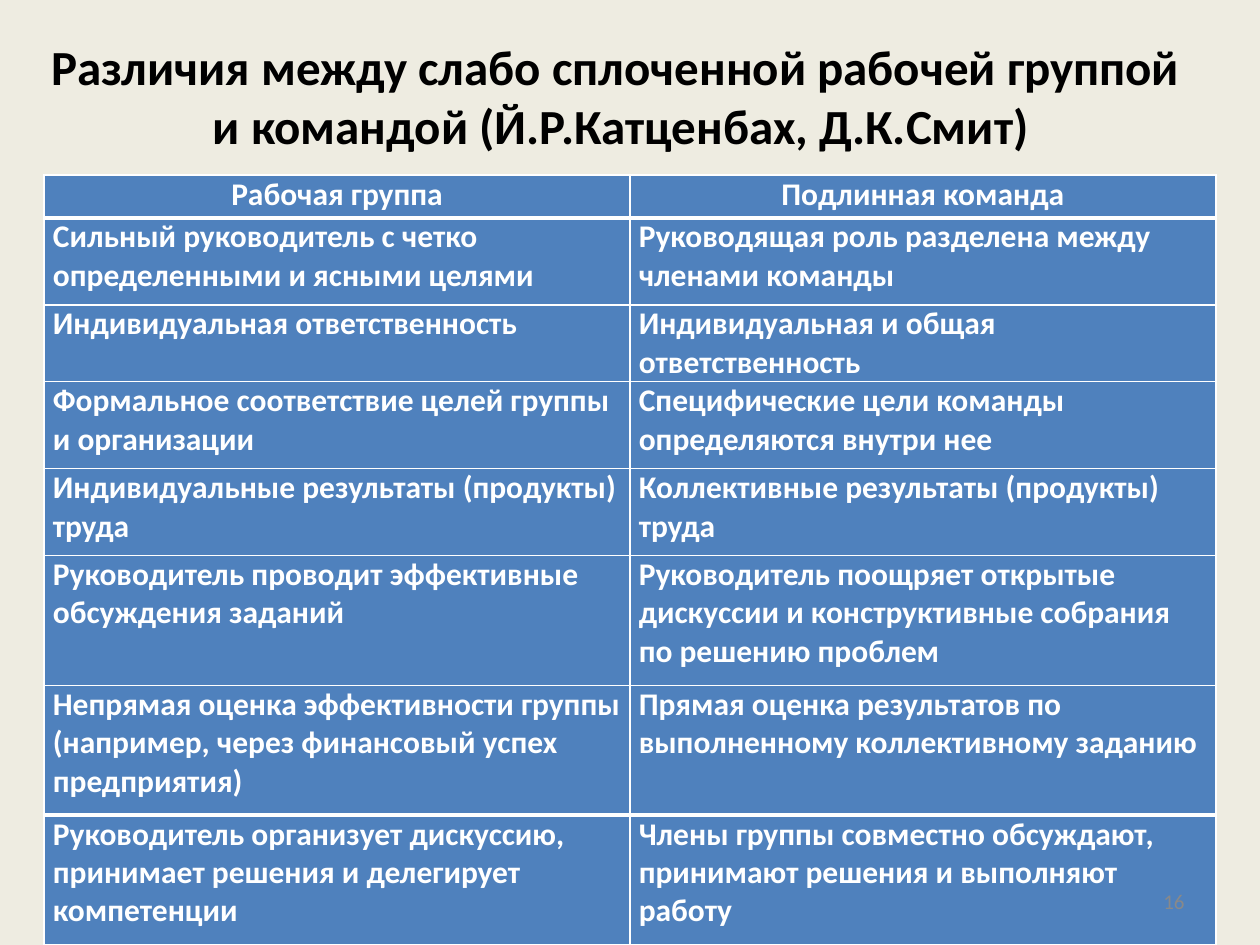
from lxml import etree
from pptx import Presentation
from pptx.dml.color import RGBColor
from pptx.enum.text import MSO_ANCHOR, PP_ALIGN
from pptx.oxml.ns import qn
from pptx.util import Inches, Pt

LEFT, CENTER, RIGHT = PP_ALIGN.LEFT, PP_ALIGN.CENTER, PP_ALIGN.RIGHT
TOP, MIDDLE = MSO_ANCHOR.TOP, MSO_ANCHOR.MIDDLE
COLORS = {"background": "EEECE1", "title": "000000", "cell": "4F81BD",
          "white": "FFFFFF", "number": "898989"}
ROWS = [
    ("Рабочая группа", "Подлинная команда"),
    ("Сильный руководитель с четко определенными и ясными целями",
     "Руководящая роль разделена между членами команды"),
    ("Индивидуальная ответственность",
     "Индивидуальная и общая ответственность"),
    ("Формальное соответствие целей группы и организации",
     "Специфические цели команды определяются внутри нее"),
    ("Индивидуальные результаты (продукты) труда",
     "Коллективные результаты (продукты) труда"),
    ("Руководитель проводит эффективные обсуждения заданий",
     "Руководитель поощряет открытые дискуссии и конструктивные собрания "
     "по решению проблем"),
    ("Непрямая оценка эффективности группы (например, через финансовый успех предприятия)",
     "Прямая оценка результатов по выполненному коллективному заданию"),
    ("Руководитель организует дискуссию, принимает решения и делегирует компетенции",
     "Члены группы совместно обсуждают, принимают решения и выполняют работу"),
]
ROW_HEIGHTS = [0.34, 0.69, 0.61, 0.69, 0.69, 1.03, 1.03, 1.03]
THICK_LINES = (1, len(ROWS) - 1)  # below the header and above the last row


def write_text(frame, text, size=18, color="white", bold=True, align=LEFT):
    frame.word_wrap = True
    paragraph = frame.paragraphs[0]
    paragraph.text = text
    paragraph.alignment = align
    for run in paragraph.runs:
        run.font.name = "Calibri"
        run.font.size = Pt(size)
        run.font.bold = bold
        run.font.color.rgb = RGBColor.from_string(COLORS[color])


def set_borders(cell, widths):
    """Draw white borders; widths are points for left, right, top, bottom."""
    properties = cell._tc.get_or_add_tcPr()
    for index, (side, width) in enumerate(zip("LRTB", widths)):
        line = etree.Element(qn(f"a:ln{side}"), w=str(Pt(width)))
        fill = etree.SubElement(line, qn("a:solidFill"))
        etree.SubElement(fill, qn("a:srgbClr"), val=COLORS["white"])
        properties.insert(index, line)


presentation = Presentation()
presentation.slide_width = Inches(10)
presentation.slide_height = Inches(7.5)
slide = presentation.slides.add_slide(presentation.slide_layouts[6])
slide.background.fill.solid()
slide.background.fill.fore_color.rgb = RGBColor.from_string(COLORS["background"])

title = slide.shapes.add_textbox(Inches(0.12), Inches(0.13), Inches(9.61), Inches(1.25))
title.text_frame.vertical_anchor = MIDDLE
write_text(title.text_frame,
           "Различия между слабо сплоченной рабочей группой \v"
           "и командой (Й.Р.Катценбах, Д.К.Смит)",
           size=28, color="title", align=CENTER)

table = slide.shapes.add_table(len(ROWS), 2, Inches(0.35), Inches(1.39),
                               Inches(9.3), Inches(sum(ROW_HEIGHTS))).table
for column in table.columns:
    column.width = Inches(4.65)
for row_index, (texts, height) in enumerate(zip(ROWS, ROW_HEIGHTS)):
    table.rows[row_index].height = Inches(height)
    top_width, bottom_width = (3 if line in THICK_LINES else 1
                               for line in (row_index, row_index + 1))
    for column_index, text in enumerate(texts):
        cell = table.cell(row_index, column_index)
        cell.margin_left = cell.margin_right = Inches(0.07)
        cell.margin_top = cell.margin_bottom = 0
        cell.vertical_anchor = TOP
        cell.fill.solid()
        cell.fill.fore_color.rgb = RGBColor.from_string(COLORS["cell"])
        set_borders(cell, (1, 1, top_width, bottom_width))
        write_text(cell.text_frame, text, align=LEFT if row_index else CENTER)

number = slide.shapes.add_textbox(Inches(7.17), Inches(6.95), Inches(2.33), Inches(0.4))
number.text_frame.vertical_anchor = MIDDLE
write_text(number.text_frame, "16", size=12, color="number", bold=False, align=RIGHT)

presentation.save("out.pptx")
